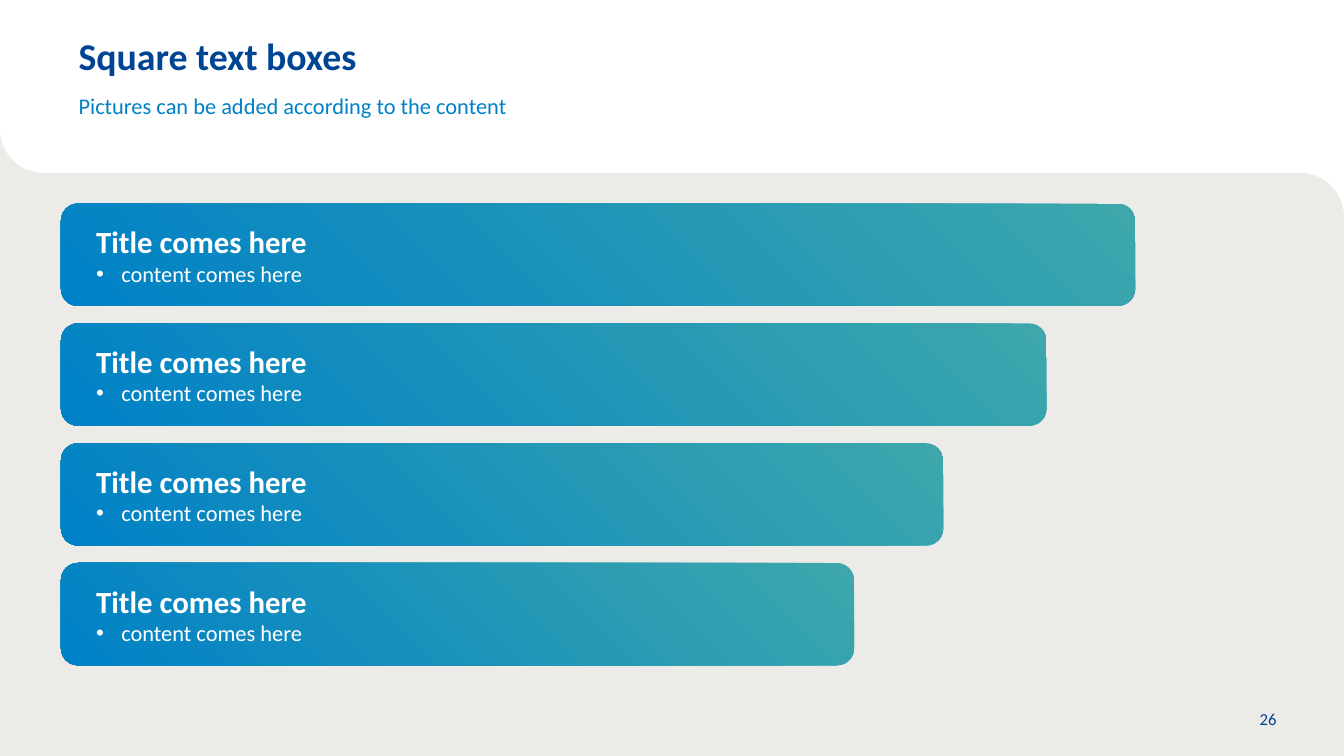
from math import cos, radians, sin

from lxml.etree import SubElement
from pptx import Presentation
from pptx.dml.color import RGBColor
from pptx.enum.shapes import MSO_SHAPE as Shape
from pptx.enum.text import MSO_ANCHOR as Anchor, PP_ALIGN as Align
from pptx.oxml.ns import qn
from pptx.util import Inches, Pt

COLOURS = {"white": "FFFFFF", "grey": "ECEBE8", "navy": "004494",
           "blue": "0081C7", "teal": "3DA7AB"}
WIDTH, HEIGHT = 26.67, 15
MARGIN = 1.21
HEADER_BOTTOM, CORNER = 3.43, 0.87
BAR_TOP, BAR_PITCH, BAR_HEIGHT = 4.04, 2.377, 2.03
BAR_WIDTHS = (21.32, 19.56, 17.51, 15.74)


def rgb(name):
    return RGBColor.from_string(COLOURS[name])


def write(paragraph, text, size, colour, bold=False, align=Align.LEFT,
          indent=0, hanging=0, bullet=None, font="Calibri"):
    """Fill a paragraph; indent and hanging are in inches."""
    properties = paragraph._p.get_or_add_pPr()
    properties.set("marL", str(Inches(indent)))
    properties.set("indent", str(-Inches(hanging)))
    if bullet:
        SubElement(properties, qn("a:buFont"), typeface="Arial")
        SubElement(properties, qn("a:buChar"), char=bullet)
    paragraph.alignment = align
    run = paragraph.add_run()
    run.text = text
    run.font.name, run.font.size, run.font.bold = font, Pt(size), bold
    run.font.color.rgb = rgb(colour)


def arc(x, y, start, end, steps=24):
    """Points of a rounded corner centred on x, y; angles in degrees."""
    angles = [radians(start + (end - start) * i / steps) for i in range(steps + 1)]
    return [(x + CORNER * cos(a), y + CORNER * sin(a)) for a in angles]


class SlideBuilder:
    def __init__(self, slide):
        self.slide = slide
        self.shapes = slide.shapes

    def background(self, colour):
        fill = self.slide.background.fill
        fill.solid()
        fill.fore_color.rgb = rgb(colour)

    def outline(self, points, colour):
        corners = [(Inches(x), Inches(y)) for x, y in points]
        builder = self.shapes.build_freeform(*corners[0])
        builder.add_line_segments(corners[1:], close=True)
        panel = builder.convert_to_shape()
        panel.shadow.inherit = False
        panel.fill.solid()
        panel.fill.fore_color.rgb = rgb(colour)
        panel.line.fill.background()

    def label(self, box, text, size, colour, inset=0, anchor=Anchor.TOP, **style):
        frame = self.shapes.add_textbox(*map(Inches, box)).text_frame
        frame.word_wrap = True
        frame.vertical_anchor = anchor
        frame.margin_left = frame.margin_right = Inches(inset)
        frame.margin_top = frame.margin_bottom = Inches(inset / 2)
        write(frame.paragraphs[0], text, size, colour, **style)

    def bar(self, box, title, content):
        bar = self.shapes.add_shape(Shape.ROUNDED_RECTANGLE, *map(Inches, box))
        bar.shadow.inherit = False
        bar.line.fill.background()
        bar.fill.gradient()
        bar.fill.gradient_angle = 225
        for stop, colour in zip(bar.fill.gradient_stops, ("teal", "blue")):
            stop.color.rgb = rgb(colour)
        frame = bar.text_frame
        frame.word_wrap = True
        frame.vertical_anchor = Anchor.MIDDLE
        write(frame.paragraphs[0], title, 44, "white", bold=True, indent=0.5)
        write(frame.add_paragraph(), content, 32, "white",
              indent=1, hanging=0.5, bullet="•")


def main():
    deck = Presentation()
    deck.slide_width, deck.slide_height = Inches(WIDTH), Inches(HEIGHT)
    page = SlideBuilder(deck.slides.add_slide(deck.slide_layouts[6]))

    page.background("grey")
    page.outline([(0, 0), (WIDTH, 0),
                  *arc(WIDTH - CORNER, HEADER_BOTTOM + CORNER, 0, -90),
                  *arc(CORNER, HEADER_BOTTOM - CORNER, 90, 180)], "white")
    page.label((24.36, 13.82, 1.07, 0.88), "26", 24, "navy",
               inset=0.1, anchor=Anchor.MIDDLE, align=Align.RIGHT)
    page.label((MARGIN, 0.64, 22.13, 0.91), "Square text boxes", 54, "navy",
               bold=True, indent=0.35)
    page.label((MARGIN, 1.83, 22.13, 1.81),
               "Pictures can be added according to the content", 32, "blue",
               indent=0.35)
    for row, width in enumerate(BAR_WIDTHS):
        page.bar((MARGIN, BAR_TOP + row * BAR_PITCH, width, BAR_HEIGHT),
                 "Title comes here", "content comes here")
    deck.save("out.pptx")


if __name__ == "__main__":
    main()
